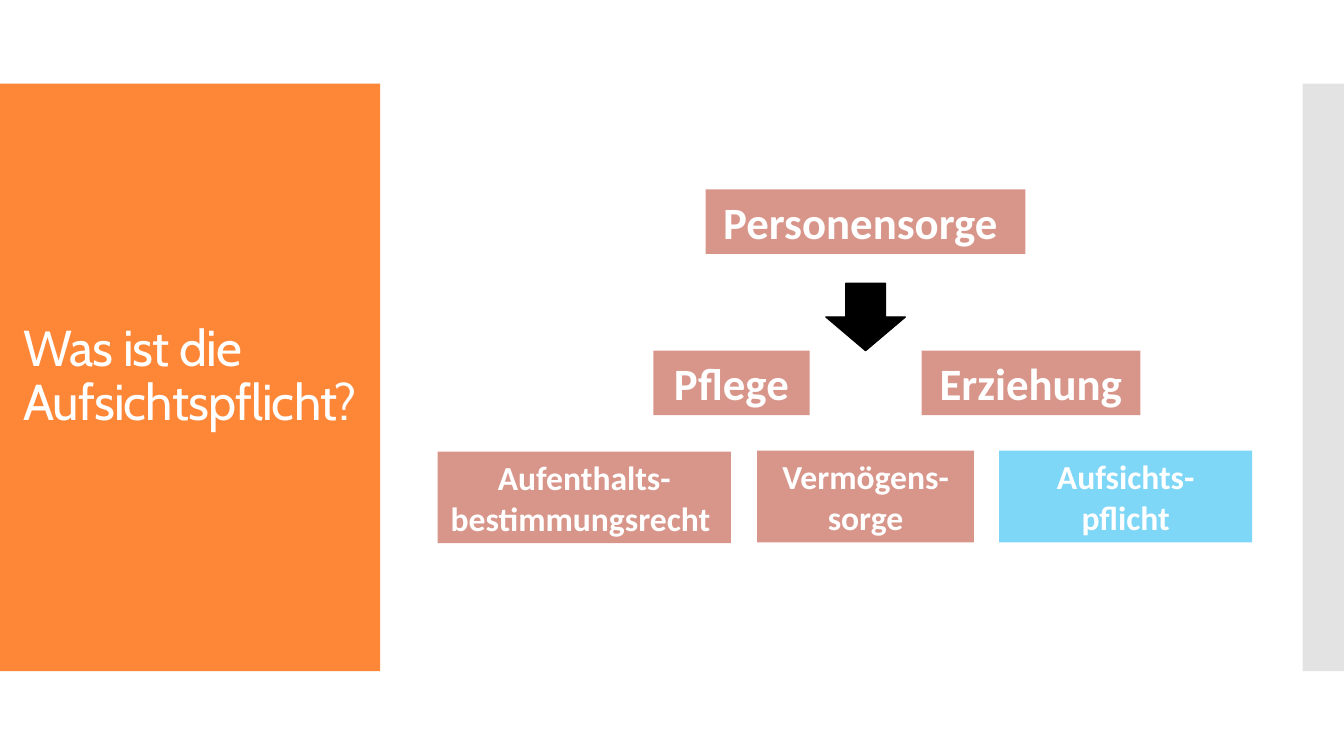
from lxml import etree
from pptx import Presentation
from pptx.dml.color import RGBColor
from pptx.enum.shapes import MSO_SHAPE
from pptx.enum.text import MSO_ANCHOR, PP_ALIGN
from pptx.oxml.ns import qn
from pptx.util import Pt

PX = 9144  # 100 px to the inch
RECT, DOWN_ARROW = MSO_SHAPE.RECTANGLE, MSO_SHAPE.DOWN_ARROW
MIDDLE, CENTER = MSO_ANCHOR.MIDDLE, PP_ALIGN.CENTER
COLORS = {"orange": "FE8637", "grey": "C8C8C8", "red": "B32C16",
          "blue": "00B0F0", "black": "000000", "white": "FFFFFF"}

prs = Presentation()
prs.slide_width, prs.slide_height = 1333 * PX, 750 * PX
s = prs.slides.add_slide(prs.slide_layouts[6])


def add_box(kind, box, color, alpha=100):
    sp = s.shapes.add_shape(kind, *(v * PX for v in box))
    sp.shadow.inherit = False
    sp.fill.solid()
    sp.fill.fore_color.rgb = RGBColor.from_string(COLORS[color])
    sp.line.fill.background()
    if alpha < 100:
        clr = sp.fill._xPr.find(qn("a:solidFill"))[0]
        etree.SubElement(clr, qn("a:alpha"), val=str(alpha * 1000))
    return sp


def style_run(r, font, size, bold):
    r.font.name, r.font.size, r.font.bold = font, Pt(size), bold
    r.font.color.rgb = RGBColor.from_string(COLORS["white"])


# Side panels
add_box(RECT, (0, 83, 377, 583), "orange")
add_box(RECT, (1292, 83, 41, 583), "grey", 50)

# Title
tf = s.shapes.add_textbox(13 * PX, 123 * PX, 355 * PX, 503 * PX).text_frame
tf.word_wrap = True
tf.vertical_anchor = MIDDLE
p = tf.paragraphs[0]
p.text = "Was ist die Aufsichtspflicht?"
p.line_spacing = 0.9
style_run(p.runs[0], "Cabin", 36, False)
p.runs[0].font._element.set("spc", "-60")

# Concept boxes, row by row
CONCEPTS = [
    ("Personensorge ", (700, 188, 317, 64), 32, "red"),
    ("Pflege", (648, 348, 155, 64), 32, "red"),
    ("Erziehung", (914, 348, 217, 64), 32, "red"),
    ("Aufenthalts-bestimmungsrecht ", (434, 448, 291, 91), 24, "red"),
    ("Vermögens-sorge", (751, 447, 215, 91), 24, "red"),
    ("Aufsichts-\npflicht", (991, 447, 251, 91), 24, "blue"),
]
for text, box, size, color in CONCEPTS:
    tf = add_box(RECT, box, color, 50).text_frame
    tf.word_wrap = True
    tf.vertical_anchor = MIDDLE
    tf.text = text
    for p in tf.paragraphs:
        p.alignment = CENTER
        style_run(p.runs[0], "Calibri", size, True)

# Arrow from the top concept to its parts
arrow = add_box(DOWN_ARROW, (819, 281, 79, 67), "black")
arrow.line.color.rgb = RGBColor.from_string(COLORS["black"])
arrow.line.width = Pt(0.85)

prs.save("out.pptx")
